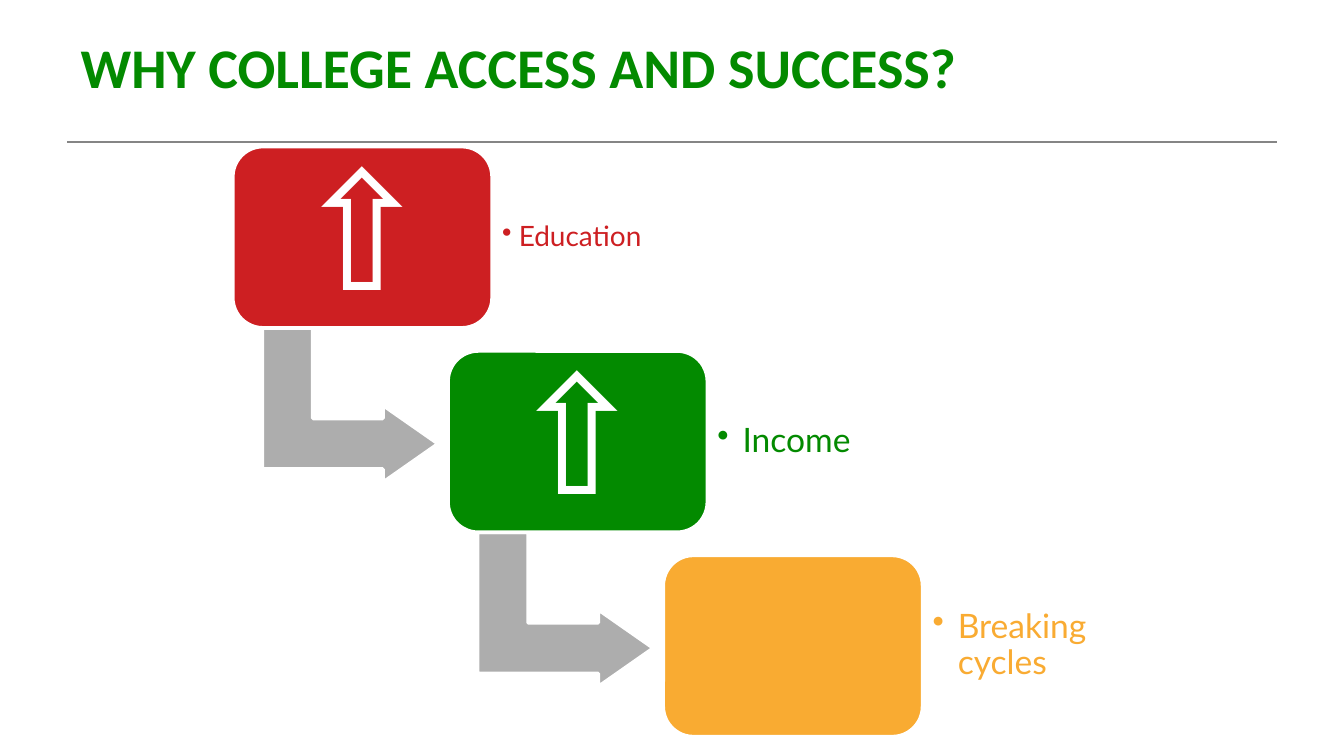
from lxml import etree
from pptx import Presentation
from pptx.dml.color import RGBColor
from pptx.enum.shapes import MSO_CONNECTOR, MSO_SHAPE
from pptx.enum.text import MSO_ANCHOR, MSO_AUTO_SIZE, PP_ALIGN
from pptx.oxml.ns import qn
from pptx.util import Pt

STRAIGHT = MSO_CONNECTOR.STRAIGHT
ROUNDED = MSO_SHAPE.ROUNDED_RECTANGLE
BENT_ARROW = MSO_SHAPE.BENT_UP_ARROW
TOP, MIDDLE = MSO_ANCHOR.TOP, MSO_ANCHOR.MIDDLE
LEFT, CENTER = PP_ALIGN.LEFT, PP_ALIGN.CENTER
NO_FIT = MSO_AUTO_SIZE.NONE

RED, GREEN, ORANGE = "CD1F22", "038A00", "F9AB32"
GREY, RULE, WHITE = "ADADAD", "858585", "FFFFFF"

CARD_LEFT, CARD_TOP, CARD_WIDTH, CARD_HEIGHT = 124.7, 78.5, 139, 97.2
STEP_X, STEP_Y = 115.3, 109.5
STEPS = [
    ("⇧", "Education", RED, 15, 8.9),
    ("⇧", "Income", GREEN, 18, 13.5),
    ("", "Breaking cycles", ORANGE, 18, 13.5),
]


def color(value):
    return RGBColor.from_string(value)


def set_frame(frame, anchor, inset_x, inset_y):
    frame.word_wrap = True
    frame.auto_size = NO_FIT
    frame.vertical_anchor = anchor
    frame.margin_left = frame.margin_right = Pt(inset_x)
    frame.margin_top = frame.margin_bottom = Pt(inset_y)


def add_span(para, text, font, size, fill, bold=False):
    span = para.add_run()
    span.text = text
    span.font.name = font
    span.font.size = Pt(size)
    span.font.bold = bold
    span.font.color.rgb = color(fill)


def add_bullet(para, indent):
    properties = para._p.get_or_add_pPr()
    properties.set("marL", str(Pt(indent)))
    properties.set("indent", str(-Pt(indent)))
    etree.SubElement(properties, qn("a:buChar")).set("char", "•")


def add_text(page, box, text, font, size, fill, inset, align=LEFT, indent=0):
    frame = page.shapes.add_textbox(*map(Pt, box)).text_frame
    set_frame(frame, MIDDLE, inset, inset)
    para = frame.paragraphs[0]
    para.alignment = align
    para.line_spacing = 0.9
    if indent:
        add_bullet(para, indent)
    add_span(para, text, font, size, fill)


def add_block(page, preset, box, fill, adjustments):
    block = page.shapes.add_shape(preset, *map(Pt, box))
    block.shadow.inherit = False
    block.fill.solid()
    block.fill.fore_color.rgb = color(fill)
    block.line.color.rgb = color(WHITE)
    block.line.width = Pt(2)
    for index, value in enumerate(adjustments):
        block.adjustments[index] = value
    return block


def add_header(page, box):
    left, top, width, height = box
    title = page.shapes.title
    title.left, title.top, title.width, title.height = map(Pt, box)
    set_frame(title.text_frame, TOP, 7.2, 3.6)
    para = title.text_frame.paragraphs[0]
    para.alignment = LEFT
    add_span(para, "WHY COLLEGE ACCESS AND SUCCESS?", "Calibri", 30, GREEN, True)

    rule_y = top + 62.6
    rule = page.shapes.add_connector(
        STRAIGHT, Pt(left), Pt(rule_y), Pt(left + width), Pt(rule_y))
    rule.line.color.rgb = color(RULE)
    rule.line.width = Pt(1)
    etree.SubElement(rule._element.spPr, qn("a:effectLst"))


def add_step(page, box, symbol, label, fill, size, indent, has_next):
    left, top, width, height = box
    if has_next:
        arrow_box = (left + 21.5, top + 91.4, 82.8, 94.3)
        arrow = add_block(page, BENT_ARROW, arrow_box, GREY, (0.328, 0.25, 0.358))
        arrow.rotation = 90
    add_block(page, ROUNDED, box, fill, (0.167,))
    if symbol:
        symbol_box = (left + 4.7, top + 4.7, width - 9.4, height - 9.4)
        add_text(page, symbol_box, symbol, "Calibri", 88, WHITE, 26.6, CENTER)
    label_box = (left + width, top + 9.3, 101.5, 78.5)
    add_text(page, label_box, label, "Lato", size, fill, 5.3, indent=indent)


def main():
    deck = Presentation()
    deck.slide_width, deck.slide_height = Pt(720), Pt(405)
    page = deck.slides.add_slide(deck.slide_layouts[5])
    add_header(page, (36, 13.7, 648, 33.1))
    for index, step in enumerate(STEPS):
        box = (CARD_LEFT + index * STEP_X, CARD_TOP + index * STEP_Y,
               CARD_WIDTH, CARD_HEIGHT)
        add_step(page, box, *step, has_next=index < len(STEPS) - 1)
    deck.save("out.pptx")


if __name__ == "__main__":
    main()
